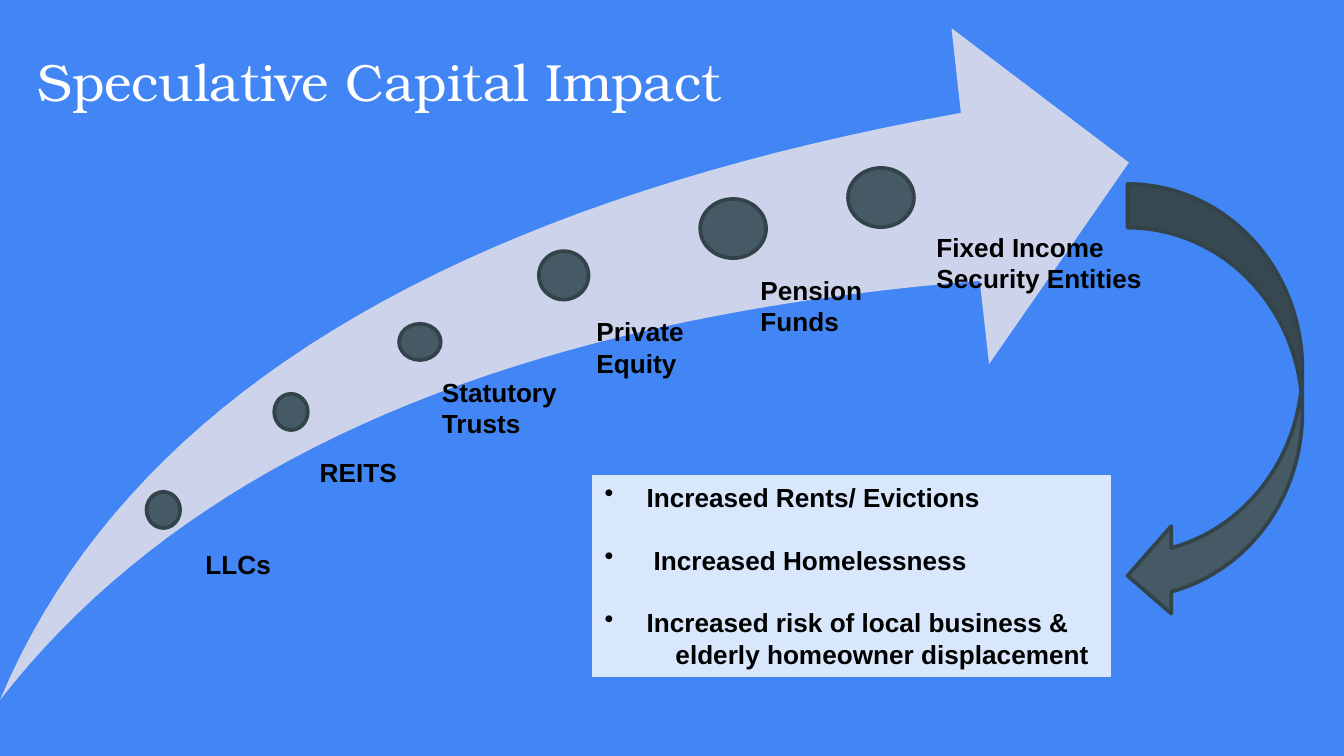
import pptx
import pptx.dml.color
import pptx.enum.shapes
import pptx.enum.text
import pptx.oxml
import pptx.oxml.ns
import pptx.util

Pt = pptx.util.Pt
SHAPES = pptx.enum.shapes.MSO_SHAPE
ANCHOR = pptx.enum.text.MSO_ANCHOR
LINE_PITCH = 16.8

MILESTONES = [
    (78.5, 263.5, 18, 19.4),
    (146.9, 211, 18, 19.4),
    (213.8, 173.5, 22.3, 19.4),
    (288.7, 134.6, 26.6, 25.9),
    (375.1, 106.6, 35.3, 31.7),
    (454.3, 90, 35.3, 31.7),
]
LABELS = [
    (["LLCs"], 103, 290.2, 83.5, 24.5),
    (["REITS"], 164.2, 241.2, 67, 24.5),
    (["Statutory Trusts"], 229.7, 198, 77, 58.3),
    (["Private", "Equity"], 312.5, 165.6, 110.9, 41),
    (["Pension Funds"], 400.3, 143.3, 100.8, 41),
    (["Fixed Income Security Entities"], 494.6, 120.2, 151.9, 58.3),
]
IMPACTS = [
    ("Increased Rents/ Evictions", {"margin": 22.5, "bullet": True}),
    ("Increased Homelessness", {"margin": 26.3, "bullet": True, "before": LINE_PITCH}),
    ("Increased risk of local business &", {"margin": 22.5, "bullet": True, "before": LINE_PITCH}),
    ("elderly homeowner displacement", {"margin": 38}),
]


def color(value):
    """Return the colour for a hex string."""
    return pptx.dml.color.RGBColor.from_string(value)


def write(paragraph, text, size=14, font="Arial", ink="000000", bold=True,
          pitch=LINE_PITCH, before=0, margin=0, bullet=False):
    """Fill a paragraph with one formatted run."""
    run = paragraph.add_run()
    run.text = text
    run.font.size = Pt(size)
    run.font.name = font
    run.font.bold = bold
    run.font.color.rgb = color(ink)
    paragraph.alignment = pptx.enum.text.PP_ALIGN.LEFT
    paragraph.space_before = Pt(before)
    if pitch:
        paragraph.line_spacing = Pt(pitch)
    properties = paragraph._p.get_or_add_pPr()
    properties.set("marL", str(Pt(margin)))
    properties.set("indent", str(-Pt(margin) if bullet else 0))
    if bullet:
        properties.append(pptx.oxml.parse_xml(
            f'<a:buChar {pptx.oxml.ns.nsdecls("a")} char="•"/>'))


def write_all(text_frame, entries):
    """Write each text and its format as a paragraph of the frame."""
    text_frame.word_wrap = True
    text_frame.vertical_anchor = ANCHOR.TOP
    for index, (text, options) in enumerate(entries):
        paragraph = text_frame.add_paragraph() if index else text_frame.paragraphs[0]
        write(paragraph, text, **options)


def paint(shape, fill, line=None, width=2):
    """Set fill and outline and remove the shadow."""
    shape.shadow.inherit = False
    shape.fill.solid()
    shape.fill.fore_color.rgb = color(fill)
    if line:
        shape.line.color.rgb = color(line)
        shape.line.width = Pt(width)
    else:
        shape.line.fill.background()


def add_shape(slide, kind, box, fill, line, width=2):
    """Add a painted preset shape."""
    shape = slide.shapes.add_shape(kind, *map(Pt, box))
    paint(shape, fill, line, width)
    return shape


def add_label(slide, lines, *box):
    """Add a bold text label."""
    label = slide.shapes.add_textbox(*map(Pt, box))
    write_all(label.text_frame, [(line, {}) for line in lines])


def bezier(start, first, second, end, steps=40):
    """Return points along a cubic curve, both ends included."""
    points = []
    for step in range(steps + 1):
        t = step / steps
        weights = ((1 - t) ** 3, 3 * t * (1 - t) ** 2, 3 * t ** 2 * (1 - t), t ** 3)
        points.append(tuple(
            sum(weight * value for weight, value in zip(weights, values))
            for values in zip(start, first, second, end)))
    return points


def add_growth_arrow(slide):
    """Add the large rising arrow."""
    tail = (0, 375.1)
    upper = bezier(tail, (67, 215.3), (239, 110.2), (514.8, 60.5))
    head = [(509.8, 15.1), (604.8, 87.1), (529.9, 195.1)]
    lower = bezier((524.9, 150.5), (275.8, 170.6), (100.8, 245.5), tail)
    start, *points = [(Pt(x), Pt(y)) for x, y in upper + head + lower[:-1]]
    builder = slide.shapes.build_freeform(*start)
    builder.add_line_segments(points, close=True)
    paint(builder.convert_to_shape(), "CCD3EA")


def add_title(slide, text):
    """Place and fill the title placeholder."""
    title = slide.shapes.title
    title.left, title.top, title.width, title.height = map(Pt, (13, 14.4, 638.6, 52.6))
    frame = title.text_frame
    frame.auto_size = pptx.enum.text.MSO_AUTO_SIZE.NONE
    frame.vertical_anchor = ANCHOR.BOTTOM
    frame.margin_left = frame.margin_right = Pt(7.2)
    frame.margin_top = frame.margin_bottom = Pt(7.2)
    write(frame.paragraphs[0], text, size=28, font="TeX Gyre Bonum",
          ink="FFFFFF", bold=False, pitch=None)


def main():
    """Build and save the presentation."""
    presentation = pptx.Presentation()
    presentation.slide_width, presentation.slide_height = Pt(720), Pt(405)
    slide = presentation.slides.add_slide(presentation.slide_layouts[5])
    slide.background.fill.solid()
    slide.background.fill.fore_color.rgb = color("4285F4")
    add_title(slide, "Speculative Capital Impact")
    add_growth_arrow(slide)
    for box in MILESTONES:
        add_shape(slide, SHAPES.OVAL, box, "455A64", "33434A")
    for label in LABELS:
        add_label(slide, *label)
    add_shape(slide, SHAPES.CURVED_LEFT_ARROW, (604.1, 98.6, 93.6, 233.3), "455A64", "33434A")
    panel = add_shape(slide, SHAPES.RECTANGLE, (316.8, 254.2, 278.6, 108.7),
                      "D9E7FD", "4285F4", 0.75)
    write_all(panel.text_frame, IMPACTS)
    presentation.save("out.pptx")


if __name__ == "__main__":
    main()
